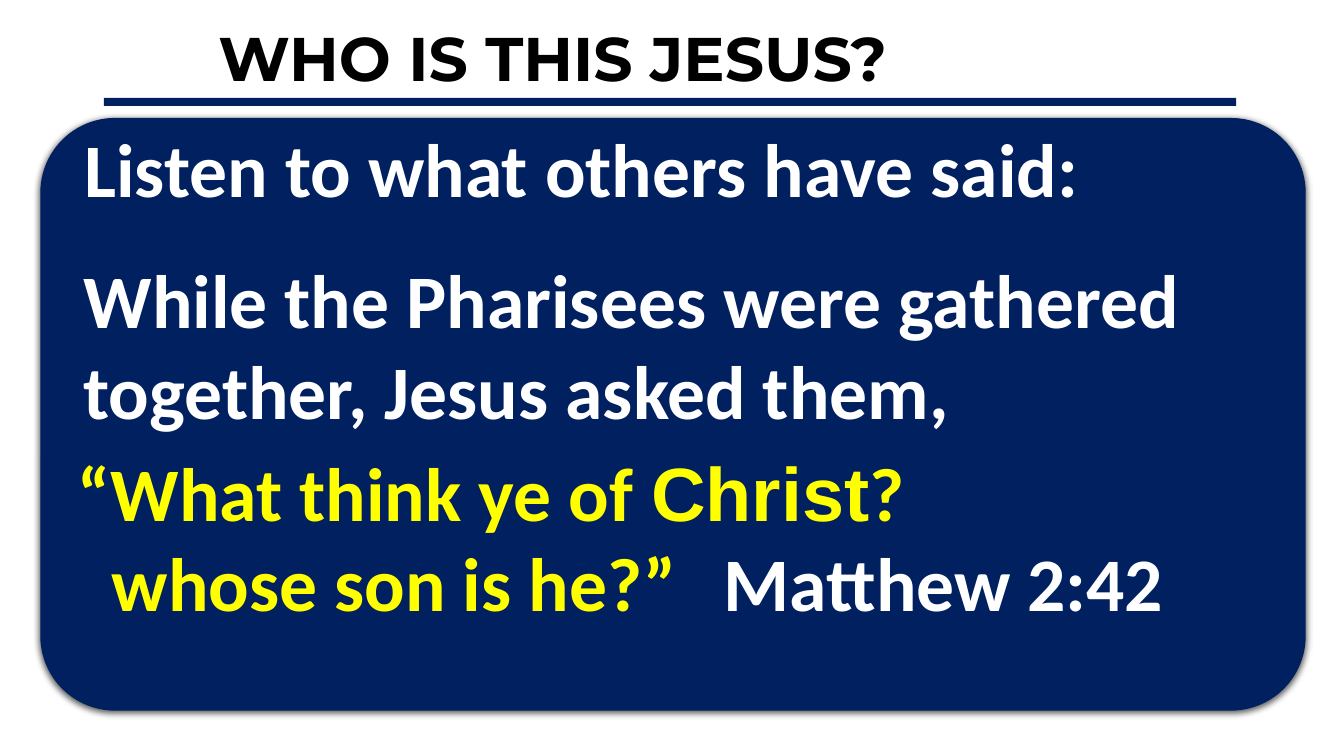
"""Build the slide WHO IS THIS JESUS? with its panel of quotations."""
from lxml import etree
from pptx import Presentation
from pptx.dml.color import RGBColor
from pptx.enum.shapes import MSO_SHAPE
from pptx.enum.text import MSO_ANCHOR, MSO_AUTO_SIZE, PP_ALIGN
from pptx.oxml.ns import qn
from pptx.util import Inches, Pt

RECT, ROUND = MSO_SHAPE.RECTANGLE, MSO_SHAPE.ROUNDED_RECTANGLE
TOP, CENTER = MSO_ANCHOR.TOP, PP_ALIGN.CENTER
NO_FIT = MSO_AUTO_SIZE.NONE
NAVY = RGBColor(0x00, 0x20, 0x60)
BLACK = RGBColor(0x00, 0x00, 0x00)
WHITE = RGBColor(0xFF, 0xFF, 0xFF)
YELLOW = RGBColor(0xFF, 0xFF, 0x00)


def add_bar(kind, left, top, width, height):
    bar = slide.shapes.add_shape(kind, Inches(left), Inches(top), Inches(width), Inches(height))
    bar.shadow.inherit = False
    bar.fill.solid()
    bar.fill.fore_color.rgb = NAVY
    bar.line.fill.background()
    return bar


def add_text(para, text, color, font="Calibri", size=54):
    run = para.add_run()
    run.text = text
    run.font.name = font
    run.font.size = Pt(size)
    run.font.bold = True
    run.font.color.rgb = color


deck = Presentation()
deck.slide_width, deck.slide_height = Inches(13.33), Inches(7.5)
slide = deck.slides.add_slide(deck.slide_layouts[5])

add_bar(RECT, 1.03, 0.97, 11.23, 0.08)
panel = add_bar(ROUND, 0.4, 1.17, 12.55, 5.88)
panel.adjustments[0] = 0.126
effects = panel.element.spPr.find(qn("a:effectLst"))
shadow = etree.SubElement(effects, qn("a:outerShdw"), blurRad=str(Pt(4.5)),
                          dist=str(Pt(1.5)), dir="5400000", rotWithShape="0")
shade = etree.SubElement(shadow, qn("a:srgbClr"), val="000000")
etree.SubElement(shade, qn("a:alpha"), val="63000")

title = slide.shapes.title
title.left, title.top = Inches(1.77), Inches(0.15)
title.width, title.height = Inches(7.43), Inches(0.84)
frame = title.text_frame
frame.word_wrap = False
frame.auto_size = NO_FIT
frame.vertical_anchor = TOP
frame.paragraphs[0].alignment = CENTER
add_text(frame.paragraphs[0], "WHO IS THIS JESUS?", BLACK, "Montserrat", 44)

verses = [
    (0.74, 1.16, 1.01, [[("Listen to what others have said:", WHITE, "Calibri")]]),
    (0.73, 2.46, 1.92, [[("While the Pharisees were gathered together, Jesus asked them,",
                          WHITE, "Calibri")]]),
    (0.67, 4.37, 2.83, [
        [("“What think ye of ", YELLOW, "Calibri"), ("Christ", YELLOW, "Arial"),
         ("?", YELLOW, "Calibri")],
        [("\twhose son is he?”", YELLOW, "Calibri"), ("\tMatthew 2:42", WHITE, "Calibri")],
    ]),
]
for left, top, height, lines in verses:
    box = slide.shapes.add_textbox(Inches(left), Inches(top), Inches(11.82), Inches(height))
    frame = box.text_frame
    frame.word_wrap = True
    for index, line in enumerate(lines):
        para = frame.paragraphs[0] if index == 0 else frame.add_paragraph()
        for text, color, font in line:
            add_text(para, text, color, font)

tabs = etree.SubElement(para._p.get_or_add_pPr(), qn("a:tabLst"))
for stop in (0.34, 6.41):
    etree.SubElement(tabs, qn("a:tab"), pos=str(Inches(stop)), algn="l")

deck.save("out.pptx")
